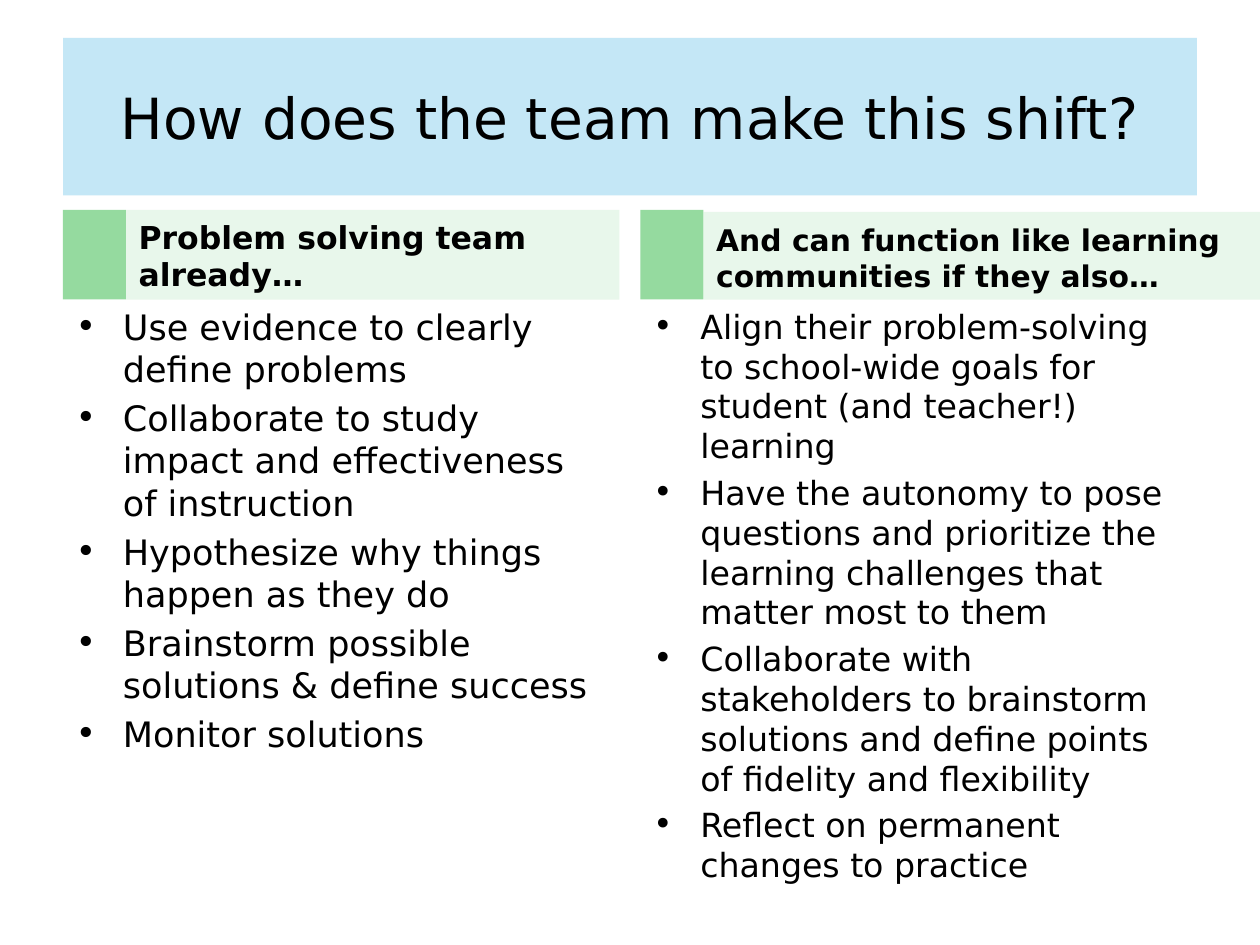
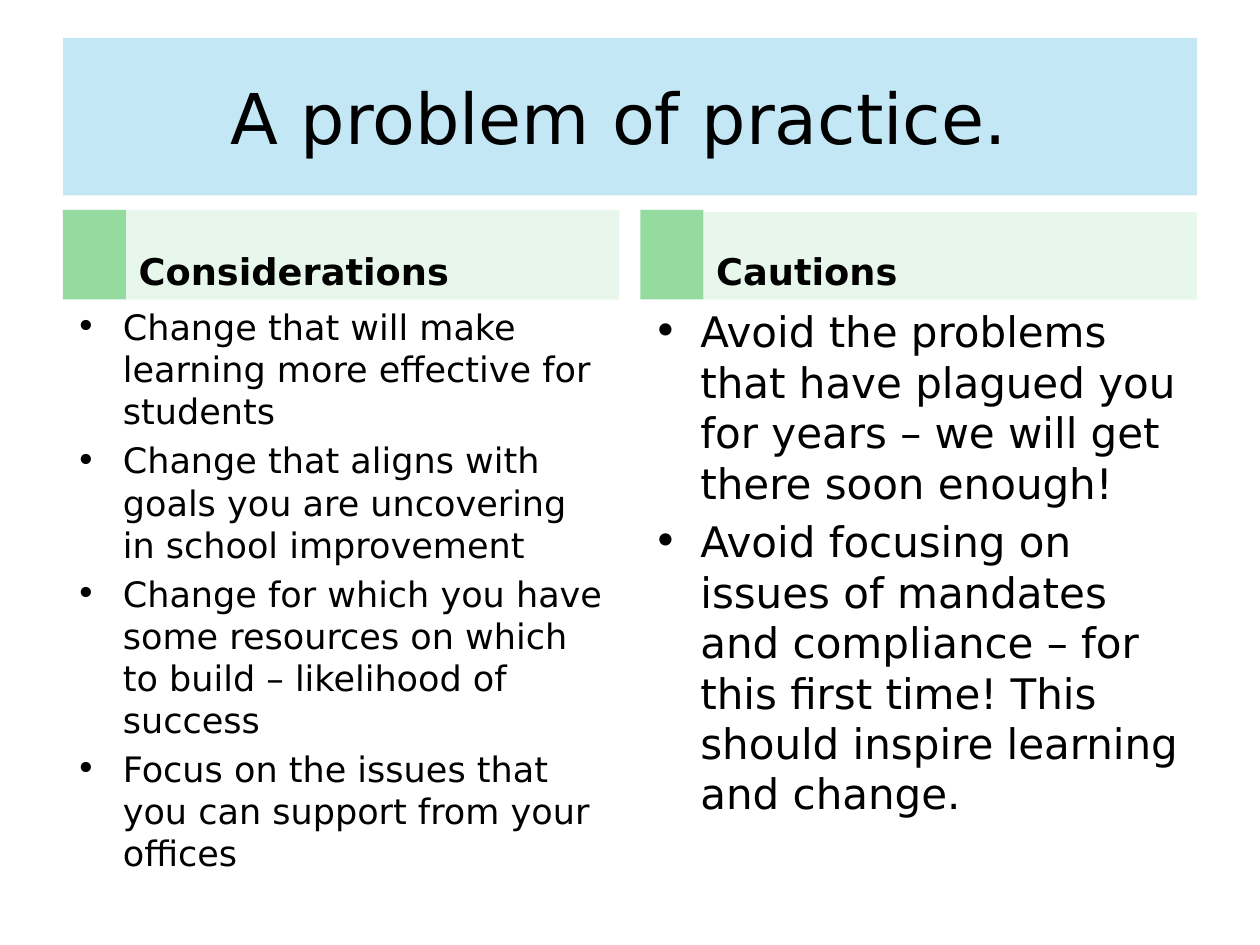
import pptx
import pptx.util
import pptx.dml.color
import pptx.enum.shapes
import pptx.enum.text
import pptx.oxml
import pptx.oxml.ns
from lxml import etree

Pt = pptx.util.Pt
ANCHOR = pptx.enum.text.MSO_ANCHOR
ALIGN = pptx.enum.text.PP_ALIGN

COLORS = {"text": "000000", "title band": "A9DCF2", "header": "E8F7EB", "marker": "95DA9F"}
FONT = "DejaVu Sans"
COLUMN_LEFTS = (36, 366)
COLUMN_WIDTH = 318
MARKER_WIDTH = 36
HEADER_TOPS = (120, 121)
HEADER_BOTTOM = 171.2
INDENT = 27

# Column: header, header size, header width, points, point size, list height
SLIDES = [
    ("How does the team make this shift?", 32.4, [
        ("Problem solving team already…", 18, 282, [
            "Use evidence to clearly define problems",
            "Collaborate to study impact and effectiveness of instruction",
            "Hypothesize why things happen as they do",
            "Brainstorm possible solutions & define success",
            "Monitor solutions",
        ], 20, 311),
        ("And can function like learning communities if they also…", 17, 318, [
            "Align their problem-solving to school-wide goals for student (and teacher!) learning",
            "Have the autonomy to pose questions and prioritize the learning challenges "
            "that matter most to them",
            "Collaborate with stakeholders to brainstorm solutions and define points "
            "of fidelity and flexibility",
            "Reflect on permanent changes to practice",
        ], 19, 345),
    ]),
    ("A problem of practice. ", 40, [
        ("Considerations", 21, 282, [
            "Change that will make learning more effective for students",
            "Change that aligns with goals you are uncovering in school improvement",
            "Change for which you have some resources on which to build – likelihood of success",
            "Focus on the issues that you can support from your offices",
        ], 20, 338.4),
        ("Cautions", 21, 282, [
            "Avoid the problems that have plagued you for years – we will get there soon enough!",
            "Avoid focusing on issues of mandates and compliance – for this first time! "
            "This should inspire learning and change.",
        ], 24, 311),
    ]),
]


def rgb(name):
    return pptx.dml.color.RGBColor.from_string(COLORS[name])


def apply(target, values):
    for name, value in values.items():
        setattr(target, name, value)


class SlideBuilder:
    def __init__(self, deck):
        self.deck = deck
        self.page = None

    def new_page(self):
        comparison = self.deck.slide_layouts.get_by_name("Comparison")
        self.page = self.deck.slides.add_slide(comparison)

    def fill(self, shape, color, opacity=None):
        shape.fill.solid()
        shape.fill.fore_color.rgb = rgb(color)
        if opacity:
            tint = shape._element.spPr.find(".//" + pptx.oxml.ns.qn("a:srgbClr"))
            etree.SubElement(tint, pptx.oxml.ns.qn("a:alpha"), val=str(opacity * 1000))

    def place(self, index, left, top, width, height, anchor):
        box = self.page.placeholders[index]
        apply(box, {"left": Pt(left), "top": Pt(top), "width": Pt(width), "height": Pt(height)})
        apply(box.text_frame, {
            "word_wrap": True, "vertical_anchor": anchor,
            "auto_size": pptx.enum.text.MSO_AUTO_SIZE.NONE,
            "margin_left": Pt(7.2), "margin_right": Pt(7.2),
            "margin_top": Pt(3.6), "margin_bottom": Pt(3.6),
        })
        return box

    def add_text(self, para, text, size, bold=False, **layout):
        apply(para, {"space_before": Pt(0), **layout})
        span = para.add_run()
        span.text = text
        apply(span.font, {"name": FONT, "size": Pt(size), "bold": bold})
        span.font.color.rgb = rgb("text")

    def bullet(self, para):
        properties = para._p.get_or_add_pPr()
        properties.set("marL", str(Pt(INDENT)))
        properties.set("indent", str(-Pt(INDENT)))
        color = etree.SubElement(properties, pptx.oxml.ns.qn("a:buClr"))
        etree.SubElement(color, pptx.oxml.ns.qn("a:srgbClr"), val=COLORS["text"])
        etree.SubElement(properties, pptx.oxml.ns.qn("a:buFont"), typeface=FONT)
        etree.SubElement(properties, pptx.oxml.ns.qn("a:buChar"), char="•")

    def title(self, text, size):
        box = self.place(0, 36, 21.6, 648, 90, ANCHOR.MIDDLE)
        self.fill(box, "title band", opacity=68)
        self.add_text(box.text_frame.paragraphs[0], text, size, alignment=ALIGN.CENTER)

    def marker(self, left):
        top = HEADER_TOPS[0]
        square = self.page.shapes.add_shape(
            pptx.enum.shapes.MSO_SHAPE.RECTANGLE,
            Pt(left), Pt(top), Pt(MARKER_WIDTH), Pt(HEADER_BOTTOM - top))
        square.shadow.inherit = False
        square.line.fill.background()
        self.fill(square, "marker")

    def header(self, index, left, top, width, text, size):
        box = self.place(index, left, top, width, HEADER_BOTTOM - top, ANCHOR.BOTTOM)
        self.fill(box, "header")
        self.add_text(box.text_frame.paragraphs[0], text, size, bold=True, alignment=ALIGN.LEFT)

    def bullets(self, index, left, height, points, size):
        box = self.place(index, left, HEADER_BOTTOM, COLUMN_WIDTH, height, ANCHOR.TOP)
        frame = box.text_frame
        for number, point in enumerate(points):
            para = frame.add_paragraph() if number else frame.paragraphs[0]
            self.bullet(para)
            gap = Pt(size * 0.2) if number else Pt(0)
            self.add_text(para, point, size, space_before=gap)


def main():
    deck = pptx.Presentation()
    deck.slide_width, deck.slide_height = Pt(720), Pt(540)
    builder = SlideBuilder(deck)

    for title, title_size, columns in SLIDES:
        builder.new_page()
        builder.title(title, title_size)
        # Two columns, each a marker, a header and a list
        for number, column in enumerate(columns):
            header, header_size, header_width, points, size, height = column
            left, top = COLUMN_LEFTS[number], HEADER_TOPS[number]
            builder.marker(left)
            builder.header(1 + 2 * number, left + MARKER_WIDTH, top, header_width,
                           header, header_size)
            builder.bullets(2 + 2 * number, left, height, points, size)

    deck.save("out.pptx")


if __name__ == "__main__":
    main()
